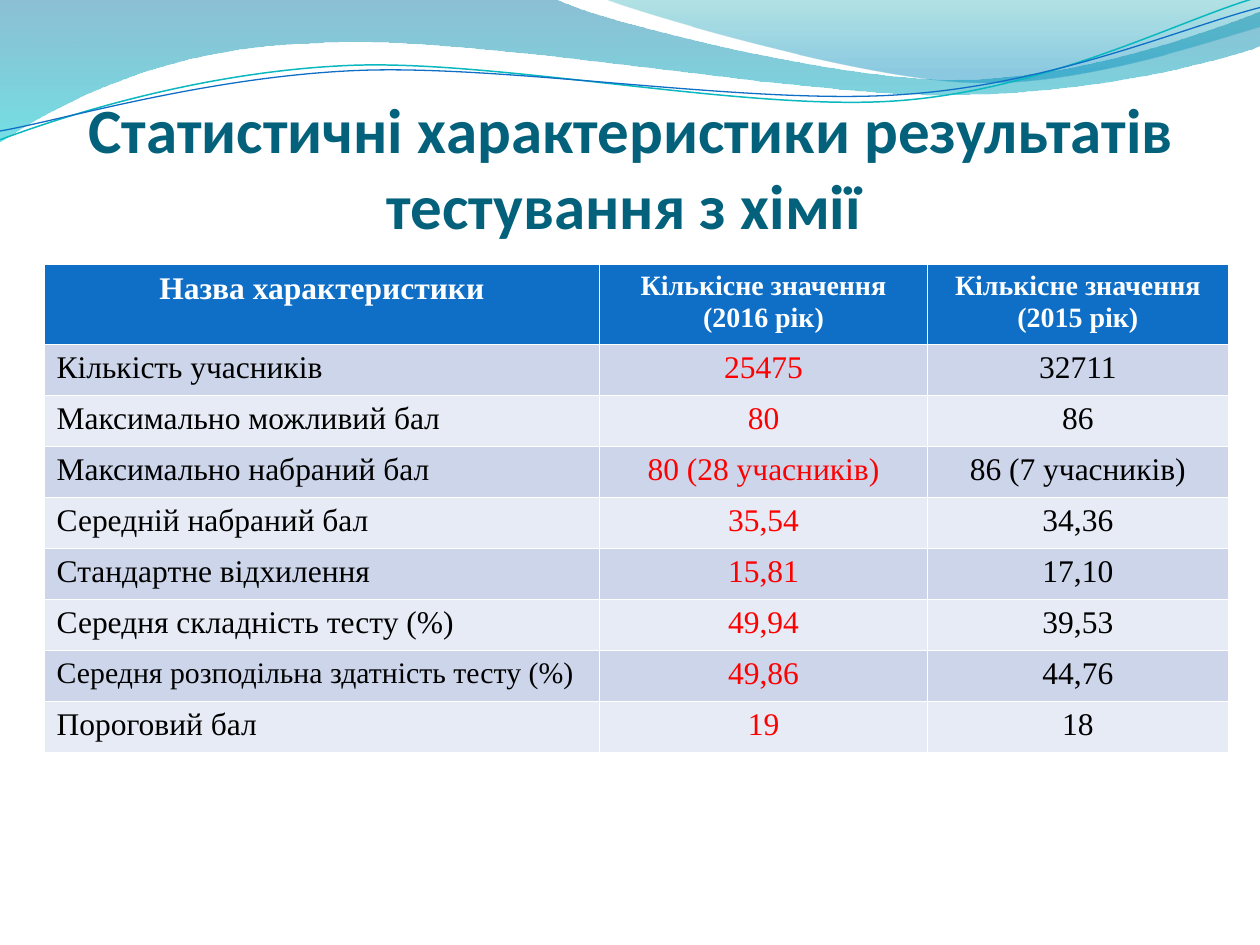
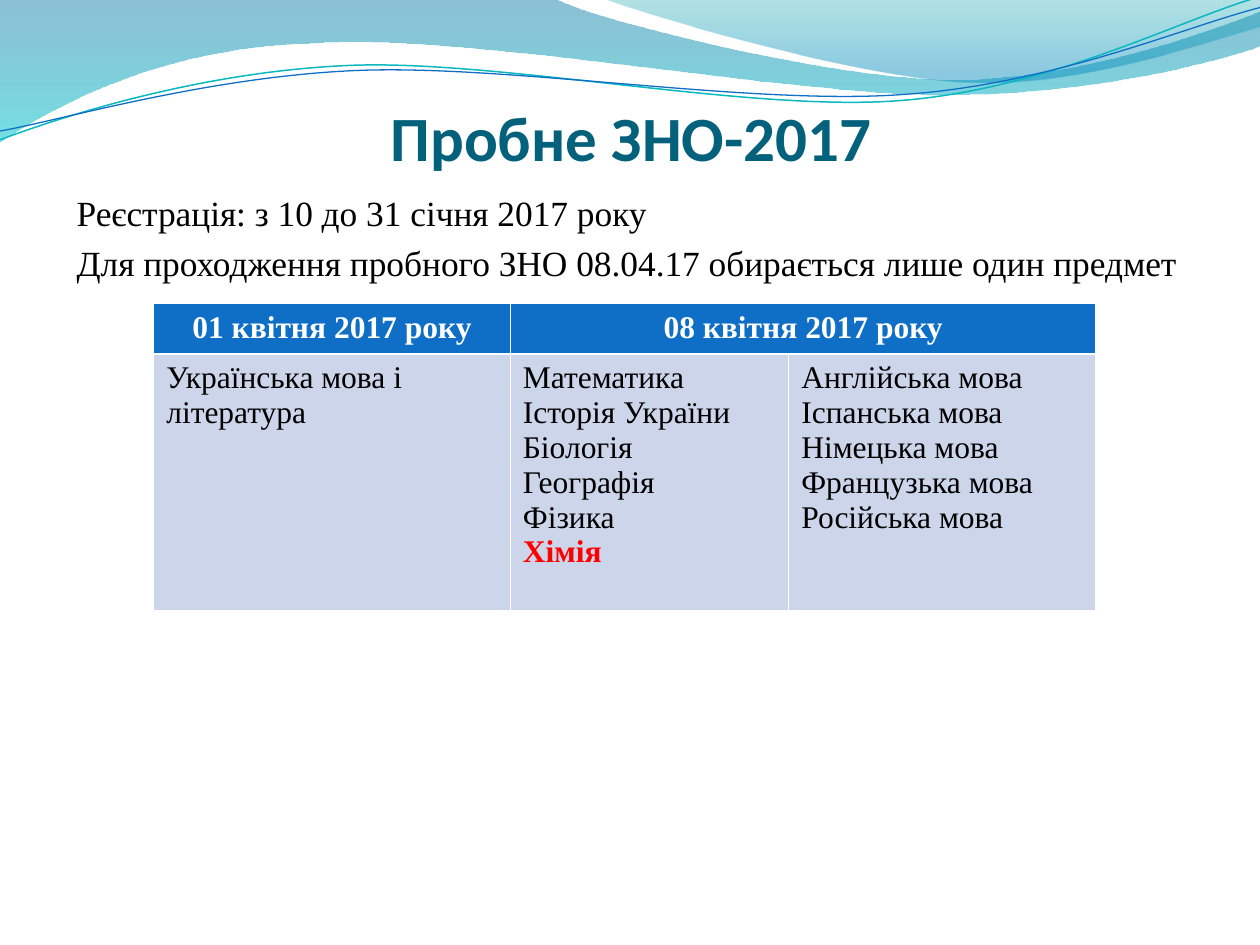
from pptx import Presentation
from pptx.dml.color import RGBColor
from pptx.enum.text import MSO_ANCHOR as Anchor, PP_ALIGN as Align
from pptx.oxml.ns import qn
from pptx.util import Inches, Pt
from lxml.etree import SubElement

WHITE = RGBColor(0xFF, 0xFF, 0xFF)
BLACK = RGBColor(0x00, 0x00, 0x00)
RED = RGBColor(0xFF, 0x00, 0x00)
BLUE = RGBColor(0x0F, 0x6F, 0xC6)
AQUA = RGBColor(0x0A, 0xB8, 0xBF)
TITLE_TEAL = RGBColor(0x04, 0x61, 0x7B)
BANDS = [RGBColor(0xE7, 0xEB, 0xF5), RGBColor(0xCC, 0xD5, 0xEA)]
TITLE_FONT, TEXT_FONT = "Calibri", "Times New Roman"

deck = Presentation()
deck.slide_width, deck.slide_height = Inches(10), Inches(7.5)


def cols(count):
    """Length of a number of grid columns, each a tenth of the slide's width."""
    return round(count * deck.slide_width / 10)


def write(frame, spans, align=Align.LEFT, font=TEXT_FONT, gap=0):
    """One paragraph for each span of (text, size, colour, bold)."""
    for index, (text, size, colour, bold) in enumerate(spans):
        para = frame.add_paragraph() if index else frame.paragraphs[0]
        para.alignment = align
        if gap:
            para.space_before = Pt(gap)
        span = para.add_run()
        span.text = text
        span.font.name, span.font.size = font, Pt(size)
        span.font.color.rgb, span.font.bold = colour, bold


# Waves: start point, then line ends (2 numbers) or Bezier curves (6 numbers)
big_wave = [(0, 0), (4.4, -0.01), (4.76, 0.17, 6.64, 0.63, 7.58, 0.63),
            (8.53, 0.63, 9.58, 0.26, 10, 0.09), (10.01, 0.36),
            (9.83, 0.44, 8.7, 0.76, 7.46, 0.75),
            (6.22, 0.75, 3.82, 0.28, 2.57, 0.34),
            (1.29, 0.36, 0.46, 0.83, -0.01, 1.13), (0, 0)]
right_wave = [(4.79, -0.01), (5.09, 0.11, 6.82, 0.62, 7.69, 0.65),
              (8.56, 0.69, 9.61, 0.32, 10, 0.21), (10, 0), (4.79, -0.01)]
aqua_thread = [(0, 1.11), (0.48, 0.93, 1.58, 0.57, 2.77, 0.52),
               (3.95, 0.47, 5.93, 0.89, 7.13, 0.8),
               (8.33, 0.71, 9.38, 0.15, 9.98, -0.02)]
blue_thread = [(0, 1.04), (0.47, 0.96, 1.64, 0.61, 2.83, 0.56),
               (4.03, 0.51, 5.97, 0.84, 7.17, 0.75),
               (8.36, 0.67, 9.41, 0.21, 10, 0.06)]

# Gradient stops are (position, colour, opacity in percent)
big_stops = [(0, RGBColor(0x00, 0x74, 0xA1), 45),
             (1, RGBColor(0x00, 0xC6, 0xCF), 55)]
right_stops = [(0, RGBColor(0x00, 0xA1, 0xA9), 30),
               (0.8, RGBColor(0x00, 0x8B, 0xBF), 45)]
waves = [(big_wave, big_stops, None), (right_wave, right_stops, None),
         (aqua_thread, None, (AQUA, 0.85)), (blue_thread, None, (BLUE, 0.75))]

# Test statistics table
results = [("Кількість учасників", "25475", "32711"),
           ("Максимально можливий бал", "80", "86"),
           ("Максимально набраний бал", "80 (28 учасників)", "86 (7 учасників)"),
           ("Середній набраний бал", "35,54", "34,36"),
           ("Стандартне відхилення", "15,81", "17,10"),
           ("Середня складність тесту (%)", "49,94", "39,53"),
           ("Середня розподільна здатність тесту (%)", "49,86", "44,76"),
           ("Пороговий бал", "19", "18")]
stat_rows = [[(Align.CENTER, [("Назва характеристики", 18, WHITE, True)])]
             + [(Align.CENTER, [(f"Кількісне значення ({year} рік)", 16, WHITE, True)])
                for year in (2016, 2015)]]
for label, this_year, last_year in results:
    label_size = 17 if len(label) > 35 else 18
    stat_rows.append([(Align.LEFT, [(label, label_size, BLACK, False)]),
                      (Align.CENTER, [(this_year, 18, RED, False)]),
                      (Align.CENTER, [(last_year, 18, BLACK, False)])])

# Trial exam schedule table
subjects = [["Українська мова і література"],
            ["Математика", "Історія України", "Біологія", "Географія", "Фізика", "Хімія"],
            ["Англійська мова", "Іспанська мова", "Німецька мова", "Французька мова",
             "Російська мова"]]
exam_rows = [[(Align.CENTER, [(f"{day} квітня 2017 року", 18, WHITE, True)])
              for day in ("01", "08")] + [None],
             [(Align.LEFT, [(name, 18, RED if name == "Хімія" else BLACK, name == "Хімія")
                            for name in names]) for names in subjects]]

registration = ["Реєстрація: з 10 до 31 січня 2017 року",
                "Для проходження пробного ЗНО 08.04.17 обирається лише один предмет"]

# Title, title top and height, body lines, table corner, columns, row heights, rows
pages = [("Статистичні характеристики результатів тестування з хімії ", 0.99, 0.93, [],
          (0.35, 2.1), (4.41, 2.6, 2.39), [0.59] + [3.24 / 8] * 8, stat_rows),
         ("Пробне ЗНО-2017", 0.68, 0.7, registration,
          (1.22, 2.41), (2.83, 2.21, 2.44), [0.37, 2.04], exam_rows)]

for title, title_top, title_height, body, corner, widths, heights, rows in pages:
    page = deck.slides.add_slide(deck.slide_layouts[6])

    # Wave band at the top
    for outline, stops, stroke in waves:
        places = [(cols(x), cols(y)) for step in outline
                  for x, y in zip(step[::2], step[1::2])]
        builder = page.shapes.build_freeform(*places[0])
        builder.add_line_segments(places[1:], close=bool(stops))
        wave = builder.convert_to_shape()
        wave.shadow.inherit = False

        # Join each three points of a curve into one Bezier segment
        segments = iter(wave._element.xpath(".//a:lnTo"))
        for step in outline[1:]:
            segment = next(segments)
            if len(step) == 6:
                curve = segment.makeelement(qn("a:cubicBezTo"))
                segment.addprevious(curve)
                for part in (segment, next(segments), next(segments)):
                    curve.append(part[0])
                    part.getparent().remove(part)

        if stops:
            wave.line.fill.background()
            wave.fill.gradient()
            wave.fill.gradient_angle = 270
            for stop, (position, colour, _) in zip(wave.fill.gradient_stops, stops):
                stop.position, stop.color.rgb = position, colour
            tints = wave._element.xpath(".//a:gradFill//a:srgbClr")
            for tint, (_, _, opacity) in zip(tints, stops):
                SubElement(tint, qn("a:alpha"), val=str(opacity * 1000))
        else:
            wave.fill.background()
            wave.line.color.rgb, wave.line.width = stroke[0], Pt(stroke[1])

    # Title
    box = page.shapes.add_textbox(cols(0.51), cols(title_top), cols(9), cols(title_height))
    frame = box.text_frame
    frame.word_wrap, frame.vertical_anchor = True, Anchor.BOTTOM
    frame.margin_left = frame.margin_right = frame.margin_bottom = 0
    write(frame, [(title, 36, TITLE_TEAL, True)], Align.CENTER, TITLE_FONT)

    # Body lines
    if body:
        box = page.shapes.add_textbox(cols(0.51), cols(1.47), cols(9), cols(0.71))
        box.text_frame.word_wrap = True
        write(box.text_frame, [(line, 20.2, BLACK, False) for line in body], gap=4)

    # Table; its default style draws the white rules
    table = page.shapes.add_table(len(rows), len(widths), cols(corner[0]), cols(corner[1]),
                                  cols(sum(widths)), cols(sum(heights))).table
    for column, width in zip(table.columns, widths):
        column.width = cols(width)
    for row, height in zip(table.rows, heights):
        row.height = cols(height)
    for r, row in enumerate(rows):
        for c, content in enumerate(row):
            cell = table.cell(r, c)
            cell.fill.solid()
            cell.fill.fore_color.rgb = BANDS[r % 2] if r else BLUE
            if content:
                write(cell.text_frame, content[1], content[0])
            else:
                table.cell(r, c - 1).merge(cell)

deck.save("out.pptx")
